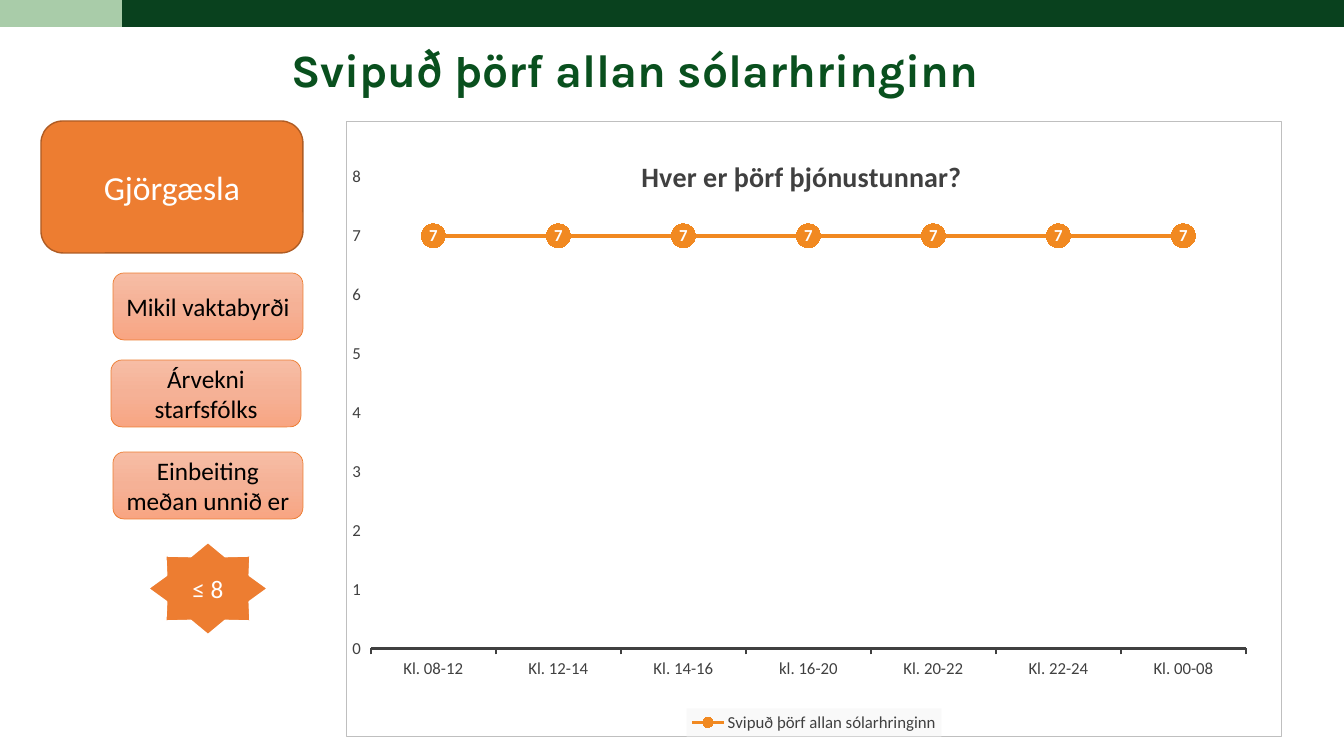
from copy import deepcopy
from dataclasses import dataclass

from lxml.etree import SubElement
from pptx import Presentation
from pptx.chart.chart import Chart
from pptx.chart.data import CategoryChartData
from pptx.dml.color import RGBColor
from pptx.dml.fill import FillFormat
from pptx.enum.chart import (XL_AXIS_CROSSES, XL_CHART_TYPE, XL_LABEL_POSITION,
                             XL_LEGEND_POSITION, XL_MARKER_STYLE, XL_TICK_MARK)
from pptx.enum.shapes import MSO_SHAPE
from pptx.enum.text import MSO_ANCHOR, MSO_AUTO_SIZE, PP_ALIGN
from pptx.oxml import parse_xml
from pptx.oxml.ns import nsdecls, qn
from pptx.oxml.xmlchemy import BaseOxmlElement
from pptx.slide import Slide
from pptx.text.text import Font, TextFrame
from pptx.util import Emu, Pt


@dataclass(frozen=True)
class Theme:
    dark_green: str = "09411E"
    light_green: str = "A9CCA9"
    title_green: str = "09501E"
    orange: str = "ED7D31"
    orange_edge: str = "AF5C24"
    series_orange: str = "F18921"
    peach: tuple[str, ...] = ("F7BDA5", "F5B196", "F8A582")
    white: str = "FFFFFF"
    black: str = "000000"
    grey: str = "404040"
    frame_grey: str = "BFBFBF"
    legend_grey: str = "F9F9F9"
    title_font: str = "Karla"
    body_font: str = "Calibri"
    title_size: int = 33
    heading_size: int = 24
    chart_title_size: int = 20
    body_size: int = 18
    chart_size: int = 12


@dataclass(frozen=True)
class Box:
    left: int
    top: int
    width: int
    height: int


@dataclass(frozen=True)
class Figure:
    box: Box
    colours: tuple[str, ...]
    preset: MSO_SHAPE = MSO_SHAPE.ROUNDED_RECTANGLE
    text: str = ""
    size: int = 18
    text_colour: str = "FFFFFF"
    line_colour: str = ""
    line_width: float = 0


THEME = Theme()
SLIDE_WIDTH, SLIDE_HEIGHT = 1344, 756
TITLE = "Svipuð þörf allan sólarhringinn"
TITLE_BOX = Box(281, 43, 1063, 87)
CHART_BOX = Box(346, 121, 936, 616)
CHART_TITLE = "Hver er þörf þjónustunnar?"
CATEGORIES = ("Kl. 08-12", "Kl. 12-14", "Kl. 14-16", "kl. 16-20",
              "Kl. 20-22", "Kl. 22-24", "Kl. 00-08")
NEED = 7
DEMANDS = (
    ("Mikil vaktabyrði", 113, 273),
    ("Árvekni starfsfólks", 111, 360),
    ("Einbeiting meðan unnið er", 113, 452),
)
FIGURES = (
    Figure(Box(122, 0, 1222, 27), (THEME.dark_green,), MSO_SHAPE.RECTANGLE),
    Figure(Box(0, 0, 122, 27), (THEME.light_green,), MSO_SHAPE.RECTANGLE),
    Figure(Box(41, 121, 262, 132), (THEME.orange,), text="Gjörgæsla",
           size=THEME.heading_size, line_colour=THEME.orange_edge, line_width=1),
    Figure(Box(148, 542, 120, 93), (THEME.orange,), MSO_SHAPE.STAR_8_POINT, "≤ 8",
           line_colour=THEME.white, line_width=1.5),
    *(Figure(Box(left, top, 190, 67), THEME.peach, text=text, size=THEME.body_size,
             text_colour=THEME.black, line_colour=THEME.orange, line_width=0.5)
      for text, left, top in DEMANDS),
)


def px(length: int) -> Emu:
    return Emu(round(length * 914400 / 100.8))


def place(box: Box) -> tuple[Emu, Emu, Emu, Emu]:
    return px(box.left), px(box.top), px(box.width), px(box.height)


def paint(fill: FillFormat, colour: str) -> None:
    fill.solid()
    fill.fore_color.rgb = RGBColor.from_string(colour)


def style_font(font: Font, name: str, size: int, colour: str, bold: bool = False) -> None:
    font.name, font.size, font.bold = name, Pt(size), bold
    font.color.rgb = RGBColor.from_string(colour)


def add_text(frame: TextFrame, text: str, name: str, size: int, colour: str,
             bold: bool = False) -> None:
    run = frame.paragraphs[0].add_run()
    run.text = text
    style_font(run.font, name, size, colour, bold)


def add_figure(slide: Slide, figure: Figure) -> None:
    shape = slide.shapes.add_shape(figure.preset, *place(figure.box))
    shape.shadow.inherit = False
    if len(figure.colours) == 1:
        paint(shape.fill, figure.colours[0])
    else:
        shape.fill.gradient()
        shape.fill.gradient_angle = 270
        stop_list = next(shape._element.iter(qn("a:gsLst")))
        middle = deepcopy(stop_list[0])
        middle.set("pos", "50000")
        stop_list.insert(1, middle)
        for stop, colour in zip(shape.fill.gradient_stops, figure.colours):
            stop.color.rgb = RGBColor.from_string(colour)
    if figure.line_colour:
        paint(shape.line.fill, figure.line_colour)
        shape.line.width = Pt(figure.line_width)
    else:
        shape.line.fill.background()
    if figure.text:
        frame = shape.text_frame
        frame.word_wrap = True
        frame.vertical_anchor = MSO_ANCHOR.MIDDLE
        frame.paragraphs[0].alignment = PP_ALIGN.CENTER
        add_text(frame, figure.text, THEME.body_font, figure.size, figure.text_colour)


def add_title(slide: Slide) -> None:
    title = slide.shapes.title
    title.left, title.top, title.width, title.height = place(TITLE_BOX)
    frame = title.text_frame
    frame.word_wrap = True
    frame.auto_size = MSO_AUTO_SIZE.NONE
    frame.vertical_anchor = MSO_ANCHOR.TOP
    frame.paragraphs[0].alignment = PP_ALIGN.LEFT
    frame.paragraphs[0].line_spacing = 0.9
    add_text(frame, TITLE, THEME.title_font, THEME.title_size, THEME.title_green, True)


def set_layout(parent: BaseOxmlElement, index: int, **values: str | float) -> None:
    for layout in parent.findall(qn("c:layout")):
        parent.remove(layout)
    layout = parse_xml(f"<c:layout {nsdecls('c')}><c:manualLayout/></c:layout>")
    for name, value in values.items():
        SubElement(layout[0], qn(f"c:{name}")).set("val", str(value))
    parent.insert(index, layout)


def set_background(parent: BaseOxmlElement, colour: str, line: str) -> None:
    parent.find(qn("c:txPr")).addprevious(parse_xml(
        f"<c:spPr {nsdecls('c', 'a')}><a:solidFill><a:srgbClr val='{colour}'/></a:solidFill>"
        f"<a:ln w='9525'>{line}</a:ln></c:spPr>"))


def format_axes(chart: Chart) -> None:
    for axis in (chart.category_axis, chart.value_axis):
        axis.has_major_gridlines = False
        axis.major_tick_mark = XL_TICK_MARK.OUTSIDE
        axis.minor_tick_mark = XL_TICK_MARK.NONE
        style_font(axis.tick_labels.font, THEME.body_font, THEME.chart_size, THEME.grey)
    chart.category_axis.crosses = XL_AXIS_CROSSES.MAXIMUM
    paint(chart.category_axis.format.line.fill, THEME.grey)
    chart.category_axis.format.line.width = Pt(1.5)
    chart.value_axis.format.line.fill.background()
    chart.value_axis.minimum_scale, chart.value_axis.maximum_scale = 0, 8
    chart.value_axis.major_unit = 1


def format_series(chart: Chart) -> None:
    chart.plots[0].vary_by_categories = False
    series = chart.plots[0].series[0]
    series.smooth = False
    paint(series.format.line.fill, THEME.series_orange)
    series.format.line.width = Pt(2.5)
    series.marker.style, series.marker.size = XL_MARKER_STYLE.CIRCLE, 17
    paint(series.marker.format.fill, THEME.series_orange)
    series.marker.format.line.fill.background()
    labels = series.data_labels
    labels.show_value, labels.position = True, XL_LABEL_POSITION.CENTER
    style_font(labels.font, THEME.body_font, THEME.chart_size, THEME.white, True)


def add_need_chart(slide: Slide) -> None:
    data = CategoryChartData()
    data.categories = CATEGORIES
    data.add_series(TITLE, [NEED] * len(CATEGORIES))
    chart = slide.shapes.add_chart(XL_CHART_TYPE.LINE_MARKERS, *place(CHART_BOX), data).chart
    style_font(chart.font, THEME.body_font, 10, THEME.black)
    add_text(chart.chart_title.text_frame, CHART_TITLE, THEME.body_font,
             THEME.chart_title_size, THEME.grey, True)
    set_layout(chart.chart_title._element, 1, xMode="edge", yMode="edge", x=0.31, y=0.05)
    set_layout(chart._chartSpace.chart.plotArea, 0, layoutTarget="inner", xMode="edge",
               yMode="edge", x=0.026, y=0.09, w=0.936, h=0.767)
    format_axes(chart)
    format_series(chart)
    chart.has_legend = True
    chart.legend.position = XL_LEGEND_POSITION.BOTTOM
    chart.legend.include_in_layout = False
    style_font(chart.legend.font, THEME.body_font, THEME.chart_size, THEME.grey)
    set_background(chart.legend._element, THEME.legend_grey, "<a:noFill/>")
    set_background(chart._chartSpace, THEME.white,
                   f"<a:solidFill><a:srgbClr val='{THEME.frame_grey}'/></a:solidFill>")


def main() -> None:
    presentation = Presentation()
    presentation.slide_width, presentation.slide_height = px(SLIDE_WIDTH), px(SLIDE_HEIGHT)
    slide = presentation.slides.add_slide(presentation.slide_layouts[5])
    add_title(slide)
    add_need_chart(slide)
    for figure in FIGURES:
        add_figure(slide, figure)
    presentation.save("out.pptx")


if __name__ == "__main__":
    main()
